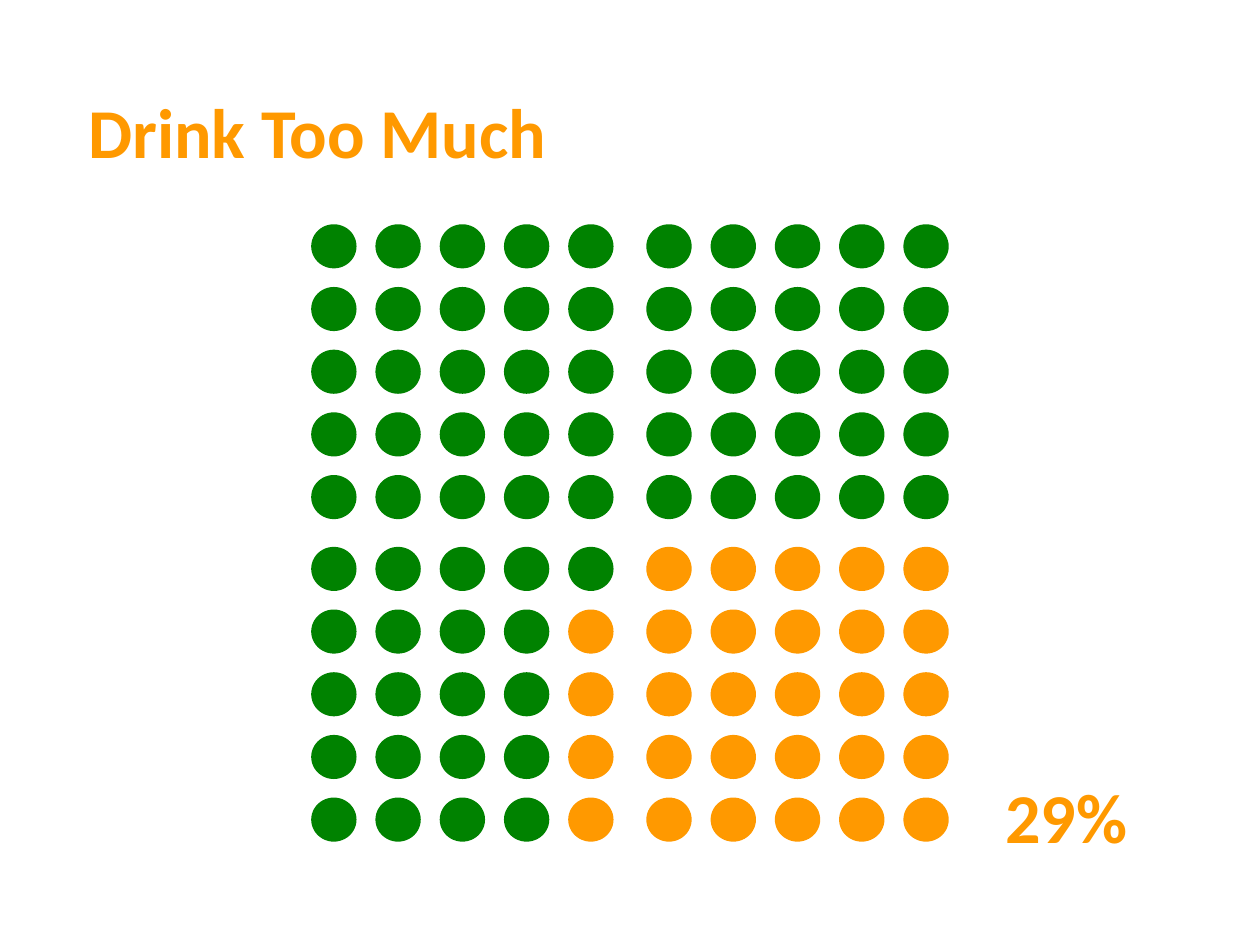
from itertools import product

from pptx import Presentation
from pptx import util as u
from pptx.dml.color import RGBColor
from pptx.enum import shapes, text

ORANGE = RGBColor(0xFF, 0x99, 0x00)
GREEN = RGBColor(0x00, 0x82, 0x00)

SIDE = 5                        # dots along each side of a block
PITCH_X, PITCH_Y = 2.04 / 4, 1.99 / 4
BLOCK_LEFTS = (2.47, 5.13)
BLOCK_TOPS = (1.78, 4.34)
DOT_WIDTH, DOT_HEIGHT = 0.36, 0.35
DRINKERS = 29                   # orange dots out of one hundred


class DotSlide:
    """Holds the style and the current slide."""

    font = {"name": "Calibri", "size": u.Pt(40), "bold": True}
    frame = {
        "margin_left": u.Inches(0.06),
        "margin_right": u.Inches(0.06),
        "margin_top": u.Inches(0.03),
        "margin_bottom": u.Inches(0.03),
        "auto_size": text.MSO_AUTO_SIZE.SHAPE_TO_FIT_TEXT,
    }

    def __init__(self, deck):
        self.width, self.height = deck.slide_width, deck.slide_height
        self.page = deck.slides.add_slide(deck.slide_layouts[6])

    def label(self, words, left, top, width, height, wrap):
        """Add bold text; lengths are shares of the slide's size."""
        box = self.page.shapes.add_textbox(
            int(left * self.width), int(top * self.height),
            int(width * self.width), int(height * self.height))
        for name, value in {**self.frame, "word_wrap": wrap}.items():
            setattr(box.text_frame, name, value)
        span = box.text_frame.paragraphs[0].add_run()
        span.text = words
        for name, value in self.font.items():
            setattr(span.font, name, value)
        span.font.color.rgb = ORANGE

    def dot(self, column, row, color):
        """Add a dot at a column and row of the hundred-dot grid."""
        block_x, x = divmod(column, SIDE)
        block_y, y = divmod(row, SIDE)
        dot = self.page.shapes.add_shape(
            shapes.MSO_SHAPE.OVAL,
            u.Inches(BLOCK_LEFTS[block_x] + x * PITCH_X),
            u.Inches(BLOCK_TOPS[block_y] + y * PITCH_Y),
            u.Inches(DOT_WIDTH), u.Inches(DOT_HEIGHT))
        dot.shadow.inherit = False
        dot.fill.solid()
        dot.fill.fore_color.rgb = color
        dot.line.fill.background()

    def block(self, block_x, block_y, orange_count):
        """Add a block of dots, coloured orange from the bottom right."""
        for row, column in product(range(SIDE), repeat=2):
            rank = (SIDE - 1 - column) * SIDE + SIDE - 1 - row
            color = ORANGE if rank < orange_count else GREEN
            self.dot(block_x * SIDE + column, block_y * SIDE + row, color)


def main():
    deck = Presentation()
    deck.slide_width, deck.slide_height = u.Inches(10), u.Inches(7.5)
    slide = DotSlide(deck)

    # Title and percentage
    slide.label("Drink Too Much", 0.064, 0.09, 0.379, 0.097, wrap=False)
    slide.label(f"{DRINKERS}%", 0.792, 0.815, 0.175, 0.097, wrap=True)

    # Four blocks: the lower right fills first, the rest spills to its left
    full = SIDE * SIDE
    slide.block(1, 0, 0)
    slide.block(1, 1, full)
    slide.block(0, 0, 0)
    slide.block(0, 1, DRINKERS - full)

    deck.save("out.pptx")


if __name__ == "__main__":
    main()
